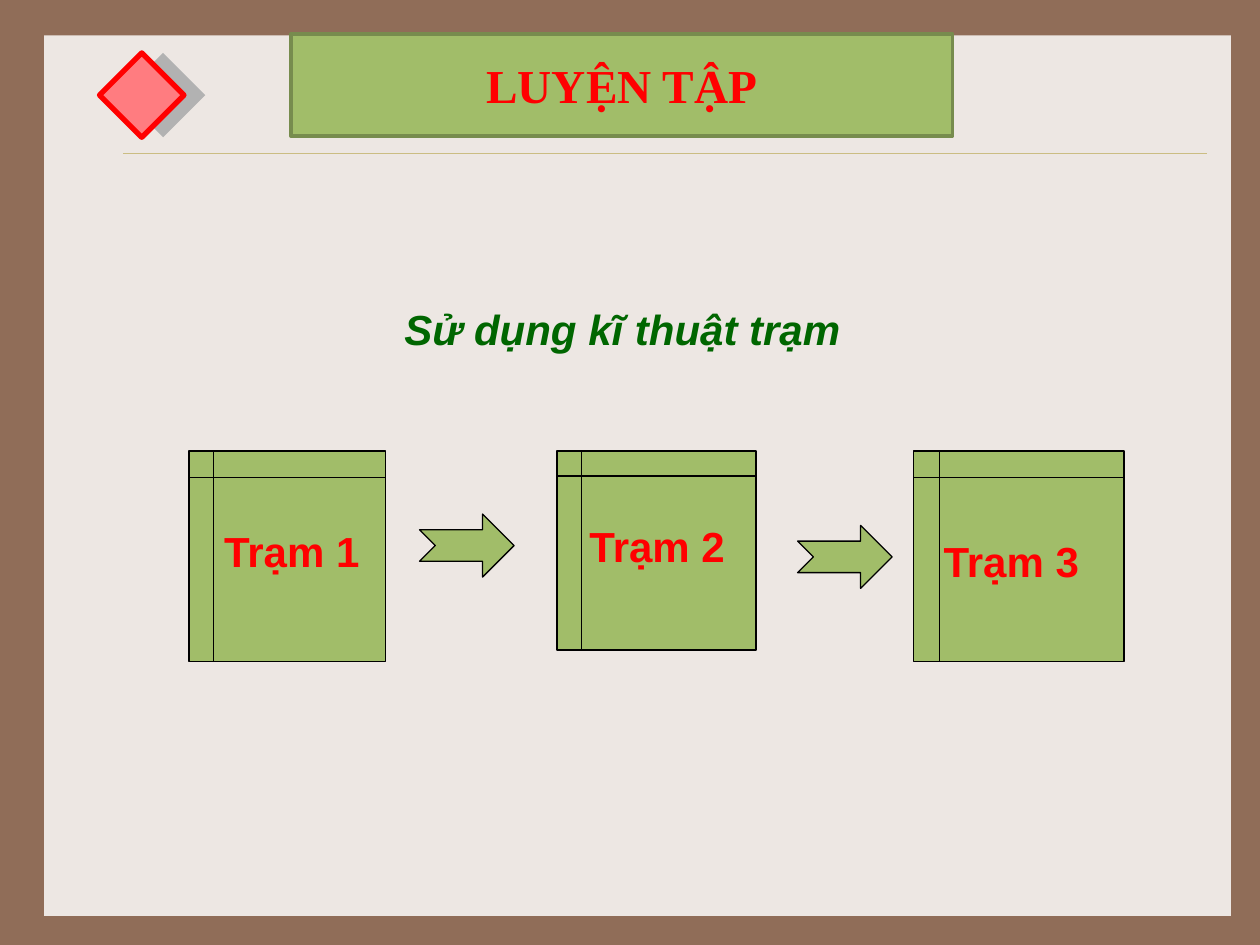
from lxml import etree
from pptx import Presentation
from pptx.dml.color import RGBColor
from pptx.enum.shapes import MSO_CONNECTOR, MSO_SHAPE
from pptx.enum.text import MSO_ANCHOR, MSO_AUTO_SIZE, PP_ALIGN
from pptx.oxml.ns import qn
from pptx.util import Inches, Pt

RECT, DIAMOND = MSO_SHAPE.RECTANGLE, MSO_SHAPE.DIAMOND
STATION = MSO_SHAPE.FLOWCHART_INTERNAL_STORAGE
ARROW = MSO_SHAPE.NOTCHED_RIGHT_ARROW
CENTER, LEFT = PP_ALIGN.CENTER, PP_ALIGN.LEFT

# Content: station label, label position, box (left, width, height)
TITLE = "LUYỆN TẬP"
SUBTITLE = "Sử dụng kĩ thuật trạm"
STATIONS = [
    ("Trạm 1", (1.68, 4.12), (1.5, 1.56, 1.67)),
    ("Trạm 2", (4.58, 4.08), (4.42, 1.58, 1.58)),
    ("Trạm 3", (7.39, 4.2), (7.25, 1.67, 1.67)),
]
ARROWS = [(3.33, 4.08), (6.33, 4.17)]
STATION_TOP = 3.58

BROWN, CREAM, GREEN, OLIVE = "906D58", "EDE7E3", "A1BD69", "778C4E"
RED, PINK, GRAY, SAND = "FF0000", "FF7C80", "B2B2B2", "CBBD83"
DARK_GREEN, BLACK = "006600", "000000"


def color(value):
    return RGBColor.from_string(value)


def paint(shape, fill, line=None, width=0.75):
    shape.fill.solid()
    shape.fill.fore_color.rgb = color(fill)
    if line:
        shape.line.color.rgb = color(line)
        shape.line.width = Pt(width)
    else:
        shape.line.fill.background()


def add_shape(page, kind, place, fill, line=None, width=0.75):
    shape = page.shapes.add_shape(kind, *map(Inches, place))
    shape.shadow.inherit = False
    paint(shape, fill, line, width)
    return shape


def write(frame, text, size, font, ink, align, italic=False):
    para = frame.paragraphs[0]
    para.text = text
    para.alignment = align
    para.font.size, para.font.name = Pt(size), font
    para.font.bold, para.font.italic = True, italic
    para.font.color.rgb = color(ink)


def add_label(page, text, place, ink, align, italic=False):
    frame = page.shapes.add_textbox(*map(Inches, place)).text_frame
    frame.word_wrap = True
    frame.auto_size = MSO_AUTO_SIZE.SHAPE_TO_FIT_TEXT
    write(frame, text, 24, "Arial", ink, align, italic)


def add_frame(page):
    # Background panel, rule and diamond ornament
    page.background.fill.solid()
    page.background.fill.fore_color.rgb = color(BROWN)
    add_shape(page, RECT, (0.35, 0.28, 9.42, 6.99), CREAM)
    rule = page.shapes.add_connector(
        MSO_CONNECTOR.STRAIGHT, *map(Inches, (0.98, 1.22, 9.58, 1.22)))
    rule.line.color.rgb = color(SAND)
    rule.line.width = Pt(0.25)
    etree.SubElement(rule.element.spPr, qn("a:effectLst"))
    add_shape(page, DIAMOND, (0.96, 0.42, 0.67, 0.67), GRAY)
    add_shape(page, DIAMOND, (0.79, 0.42, 0.67, 0.67), PINK, RED, 3)


def add_title(page):
    title = page.shapes.title
    title.element.getparent().append(title.element)  # above the panel
    title.left, title.top, title.width, title.height = map(
        Inches, (2.31, 0.27, 5.25, 0.81))
    paint(title, GREEN, OLIVE, 2)
    frame = title.text_frame
    frame.auto_size = MSO_AUTO_SIZE.NONE
    frame.vertical_anchor = MSO_ANCHOR.MIDDLE
    frame.margin_left = frame.margin_right = Inches(0.03)
    frame.margin_top = frame.margin_bottom = Inches(0.02)
    write(frame, TITLE, 27, "Times New Roman", RED, CENTER)


def main():
    deck = Presentation()
    deck.slide_width, deck.slide_height = Inches(10), Inches(7.5)
    page = deck.slides.add_slide(deck.slide_layouts[5])
    add_frame(page)
    add_title(page)
    add_label(page, SUBTITLE, (1.23, 2.36, 7.42, 0.51), DARK_GREEN, CENTER, True)

    # Stations, the arrows between them, then their labels
    for _, _, (left, width, height) in STATIONS:
        add_shape(page, STATION, (left, STATION_TOP, width, height), GREEN, BLACK)
    for left, top in ARROWS:
        add_shape(page, ARROW, (left, top, 0.75, 0.5), GREEN, BLACK)
    for label, (left, top), _ in STATIONS:
        add_label(page, label, (left, top, 1.39, 0.5), RED, LEFT)

    deck.save("out.pptx")


if __name__ == "__main__":
    main()
